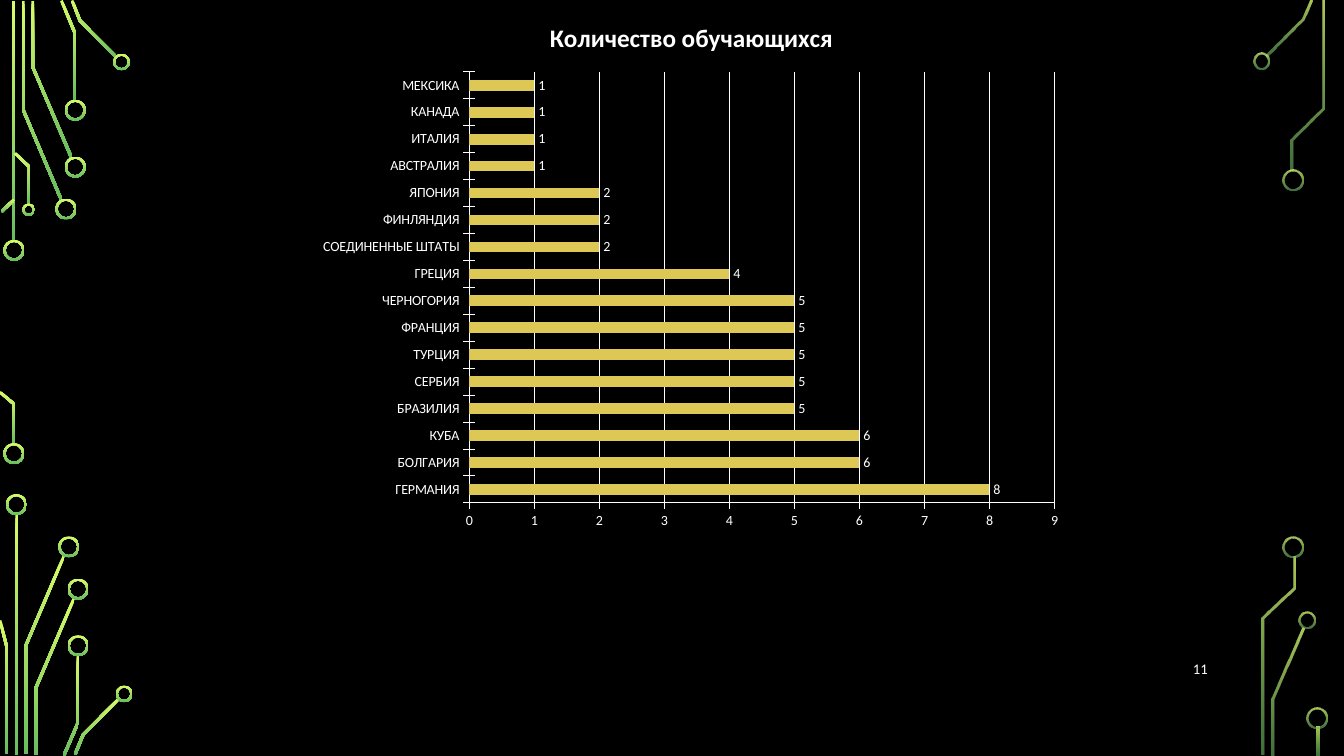
"""Build a dark circuit-board slide with a bar chart of students by country."""
import itertools
from dataclasses import dataclass

import lxml.etree
import pptx
import pptx.chart.chart
import pptx.chart.data
import pptx.dml.color
import pptx.enum.chart
import pptx.enum.shapes
import pptx.enum.text
import pptx.oxml
import pptx.oxml.ns
import pptx.shapes.autoshape
import pptx.slide
import pptx.util

Pt = pptx.util.Pt
WHITE, BLACK, GOLD = "FFFFFF", "000000", "DDC855"
LIME, GREEN = "D8FC68", "66BD5F"
FONT = "Calibri"
TRACE_WIDTH, RING_WIDTH = 2, 1.5
OPAQUE, FADED = (100, 100), (80, 60)
HEADING = "Количество обучающихся"
STUDENTS = {
    "ГЕРМАНИЯ": 8, "БОЛГАРИЯ": 6, "КУБА": 6, "БРАЗИЛИЯ": 5,
    "СЕРБИЯ": 5, "ТУРЦИЯ": 5, "ФРАНЦИЯ": 5, "ЧЕРНОГОРИЯ": 5,
    "ГРЕЦИЯ": 4, "СОЕДИНЕННЫЕ ШТАТЫ": 2, "ФИНЛЯНДИЯ": 2, "ЯПОНИЯ": 2,
    "АВСТРАЛИЯ": 1, "ИТАЛИЯ": 1, "КАНАДА": 1, "МЕКСИКА": 1,
}


@dataclass(frozen=True)
class Ring:
    x: float
    y: float
    diameter: float = 15


@dataclass(frozen=True)
class Trace:
    points: tuple[tuple[float, float], ...]


@dataclass(frozen=True)
class Circuit:
    opacity: tuple[int, int]
    traces: tuple[Trace, ...]
    rings: tuple[Ring, ...]


LEFT_CIRCUIT = Circuit(
    OPAQUE,
    (
        Trace(((9.7, 0.7), (9.7, 172.8))),
        Trace(((16.6, 0.7), (16.6, 78.5), (43.9, 143))),
        Trace(((23.4, 0.7), (23.4, 47.9), (51.1, 112.7))),
        Trace(((43.9, 0.4), (53.6, 23.8), (53.6, 72))),
        Trace(((51.5, 0.4), (57.2, 14.8), (83.2, 41))),
        Trace(((1.1, 151.2), (10.1, 142.6))),
        Trace(((0, 280.1), (10.1, 288.7), (10.1, 317.5))),
        Trace(((10.8, 109.4), (20.9, 119.2), (20.9, 146.2))),
        Trace(((11.9, 367.2), (11.9, 539.3))),
        Trace(((18.4, 538.6), (18.4, 461.2), (45.7, 397.1))),
        Trace(((0, 443.2), (4.7, 461.5), (4.7, 538.6))),
        Trace(((25.6, 539.3), (25.6, 491.4), (52.9, 427.3))),
        Trace(((45.7, 539.6), (55.8, 516.2), (55.8, 468))),
        Trace(((53.6, 538.9), (59.4, 524.9), (85, 499))),
    ),
    (
        Ring(10, 178.8), Ring(9.9, 324), Ring(47.1, 149.3), Ring(53.8, 119.3),
        Ring(53.8, 78.7), Ring(86.8, 44.3, 12), Ring(20.5, 149.8, 9),
        Ring(11.7, 360.4), Ring(49.2, 390.6), Ring(55.8, 420.8),
        Ring(55.8, 461.2), Ring(88.7, 495.6, 12),
    ),
)
RIGHT_CIRCUIT = Circuit(
    FADED,
    (
        Trace(((905, 40), (930.6, 14), (936.4, 0.4))),
        Trace(((909, 539.3), (909, 499.3), (931, 448.9))),
        Trace(((923, 121.7), (923, 99.7), (945, 77.4), (945, 0.7))),
        Trace(((901.8, 539.3), (901.8, 441.7), (924.1, 420.1), (924.1, 397.4))),
        Trace(((941.4, 519.1), (941.4, 539.3))),
    ),
    (
        Ring(901.1, 43.6, 12), Ring(923.4, 128.8), Ring(933.4, 443.1, 12),
        Ring(923.8, 390.6), Ring(940.7, 512.6),
    ),
)


def rgb(code: str) -> pptx.dml.color.RGBColor:
    return pptx.dml.color.RGBColor.from_string(code)


def glow(shape: pptx.shapes.autoshape.Shape, opacity: tuple[int, int]) -> None:
    shape.shadow.inherit = False
    shape.line.fill.background()
    shape.fill.gradient()
    shape.fill.gradient_angle = 270
    for stop, code in zip(shape.fill.gradient_stops, (LIME, GREEN)):
        stop.color.rgb = rgb(code)
    if opacity != OPAQUE:
        tints = shape.fill._xPr.iter(pptx.oxml.ns.qn("a:srgbClr"))
        for tint, percent in zip(tints, opacity):
            lxml.etree.SubElement(tint, pptx.oxml.ns.qn("a:alpha"), val=str(percent * 1000))


def outline(trace: Trace) -> list[tuple[int, int]]:
    spine = [complex(x, y) for x, y in trace.points]
    normals = [1j * (b - a) / abs(b - a) for a, b in itertools.pairwise(spine)]
    joints = zip([normals[0], *normals], [*normals, normals[-1]])
    offsets = [
        (m + n) / (1 + (m * n.conjugate()).real) * TRACE_WIDTH / 2 for m, n in joints
    ]
    near = [p + o for p, o in zip(spine, offsets)]
    far = [p - o for p, o in zip(spine, offsets)]
    return [(Pt(p.real), Pt(p.imag)) for p in near + far[::-1]]


def draw_circuit(slide: pptx.slide.Slide, circuit: Circuit) -> None:
    for trace in circuit.traces:
        first, *rest = outline(trace)
        builder = slide.shapes.build_freeform(*first)
        builder.add_line_segments(rest, close=True)
        glow(builder.convert_to_shape(), circuit.opacity)
    for ring in circuit.rings:
        loop = slide.shapes.add_shape(
            pptx.enum.shapes.MSO_SHAPE.DONUT,
            Pt(ring.x - ring.diameter / 2), Pt(ring.y - ring.diameter / 2),
            Pt(ring.diameter), Pt(ring.diameter),
        )
        loop.adjustments[0] = RING_WIDTH / ring.diameter
        glow(loop, circuit.opacity)


def place_plot(chart: pptx.chart.chart.Chart) -> None:
    plot_area = chart._chartSpace.chart.plotArea
    for stale in plot_area.findall(pptx.oxml.ns.qn("c:layout")):
        plot_area.remove(stale)
    spots = {"x": 0.21, "y": 0.133, "w": 0.764, "h": 0.798}
    settings = '<c:layoutTarget val="inner"/><c:xMode val="edge"/><c:yMode val="edge"/>'
    settings += "".join(f'<c:{key} val="{value}"/>' for key, value in spots.items())
    plot_area.insert(0, pptx.oxml.parse_xml(
        f'<c:layout {pptx.oxml.ns.nsdecls("c")}><c:manualLayout>{settings}'
        "</c:manualLayout></c:layout>"
    ))


def draw_students(slide: pptx.slide.Slide) -> None:
    data = pptx.chart.data.CategoryChartData()
    data.categories = list(STUDENTS)
    data.add_series(HEADING, list(STUDENTS.values()))
    chart = slide.shapes.add_chart(
        pptx.enum.chart.XL_CHART_TYPE.BAR_CLUSTERED, Pt(220.3), Pt(0), Pt(547.2), Pt(386), data
    ).chart
    chart.font.name, chart.font.size = FONT, Pt(10)
    chart.font.color.rgb = rgb(WHITE)
    chart.has_legend = False
    chart.has_title = True
    chart.chart_title.include_in_layout = False
    heading = chart.chart_title.text_frame
    heading.text = HEADING
    style = heading.paragraphs[0].runs[0].font
    style.name, style.size, style.bold = FONT, Pt(18), True
    style.color.rgb = rgb(WHITE)
    for axis in (chart.category_axis, chart.value_axis):
        axis.major_tick_mark = pptx.enum.chart.XL_TICK_MARK.CROSS
        axis.minor_tick_mark = pptx.enum.chart.XL_TICK_MARK.NONE
        axis.format.line.color.rgb = rgb(WHITE)
        axis.format.line.width = Pt(0.75)
    scale = chart.value_axis
    scale.minimum_scale, scale.maximum_scale, scale.major_unit = 0, 9, 1
    scale.has_major_gridlines = True
    scale.major_gridlines.format.line.color.rgb = rgb(WHITE)
    scale.major_gridlines.format.line.width = Pt(0.75)
    bars = chart.plots[0]
    bars.gap_width, bars.vary_by_categories = 150, False
    bars.series[0].format.fill.solid()
    bars.series[0].format.fill.fore_color.rgb = rgb(GOLD)
    bars.has_data_labels = True
    bars.data_labels.show_value = True
    bars.data_labels.position = pptx.enum.chart.XL_LABEL_POSITION.OUTSIDE_END
    place_plot(chart)


def draw_page_number(slide: pptx.slide.Slide) -> None:
    number = slide.shapes.add_textbox(Pt(809.3), Pt(463), Pt(60.5), Pt(28.8)).text_frame
    number.word_wrap = True
    number.vertical_anchor = pptx.enum.text.MSO_ANCHOR.MIDDLE
    number.text = "11"
    number.paragraphs[0].alignment = pptx.enum.text.PP_ALIGN.RIGHT
    style = number.paragraphs[0].runs[0].font
    style.name, style.size = FONT, Pt(10.5)
    style.color.rgb = rgb(WHITE)


def main() -> None:
    deck = pptx.Presentation()
    deck.slide_width, deck.slide_height = Pt(960), Pt(540)
    slide = deck.slides.add_slide(deck.slide_layouts[6])
    slide.background.fill.solid()
    slide.background.fill.fore_color.rgb = rgb(BLACK)
    for circuit in (LEFT_CIRCUIT, RIGHT_CIRCUIT):
        draw_circuit(slide, circuit)
    draw_page_number(slide)
    draw_students(slide)
    deck.save("out.pptx")


if __name__ == "__main__":
    main()
